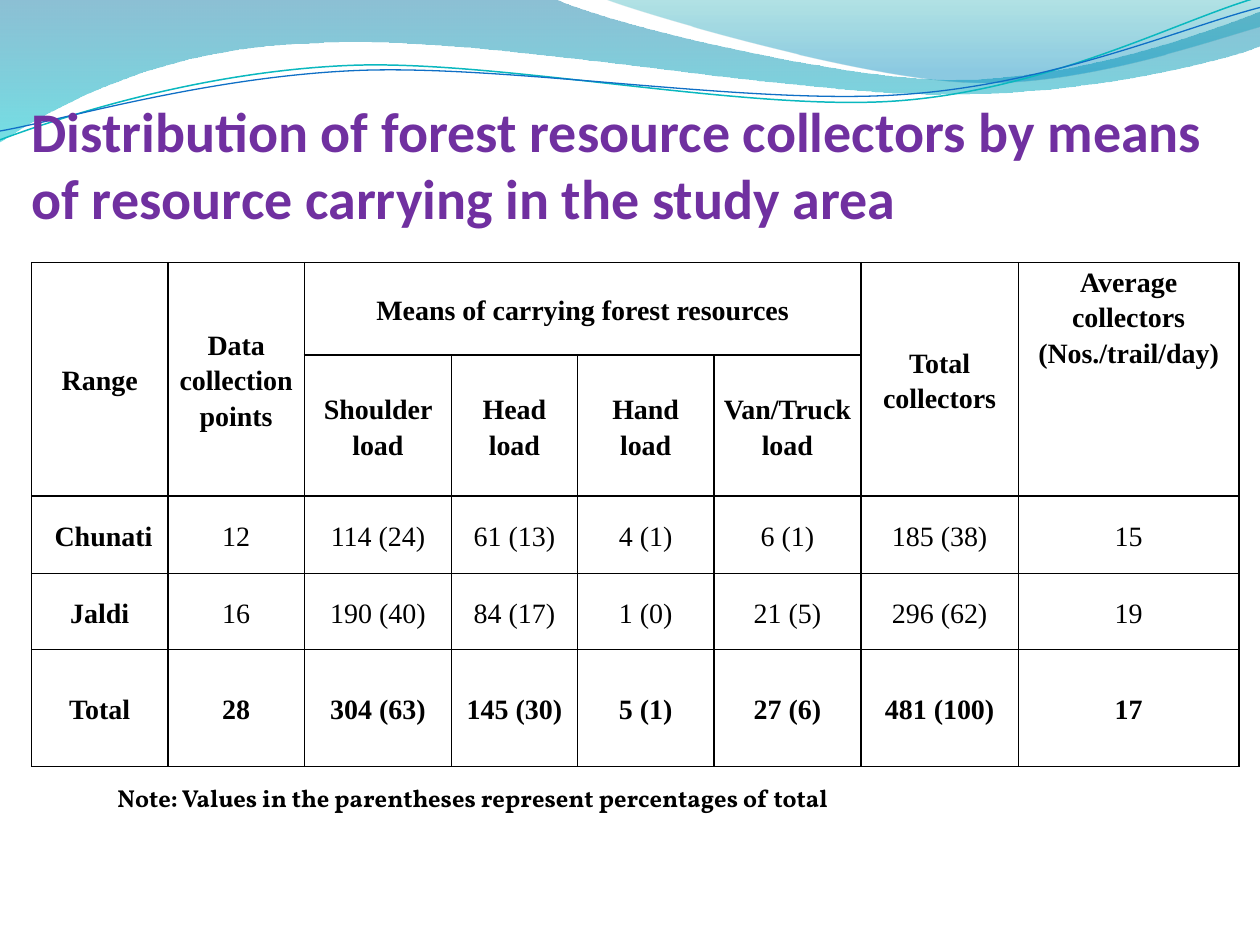
import math
from dataclasses import dataclass
from itertools import product
from typing import Optional

import pptx
import pptx.dml.color
import pptx.enum.text
import pptx.oxml
import pptx.oxml.ns
import pptx.util

Pt = pptx.util.Pt
RGB = pptx.dml.color.RGBColor.from_string
ANCHOR = pptx.enum.text.MSO_ANCHOR
ALIGN = pptx.enum.text.PP_ALIGN
qn = pptx.oxml.ns.qn
NAMESPACE = pptx.oxml.ns.nsdecls("a")


@dataclass(frozen=True)
class Theme:
    title_color: str = "7030A0"
    ink: str = "000000"
    title_font: str = "Calibri"
    table_font: str = "Times New Roman"
    note_font: str = "Vollkorn"
    title_size: float = 32
    table_size: float = 16
    note_size: float = 14
    border: float = 1


THEME = Theme()


@dataclass(frozen=True)
class Stop:
    position: float
    color: str
    opacity: int


@dataclass(frozen=True)
class Wave:
    """Outline in points: pairs are straight segments, sextets are Bezier curves."""
    start: tuple
    segments: tuple
    stops: tuple = ()
    line: Optional[tuple] = None
    center: tuple = (0, 0)
    tilt: float = 0


@dataclass(frozen=True)
class Style:
    font: str
    size: float
    color: str = THEME.ink
    bold: bool = True


@dataclass(frozen=True)
class Entry:
    paragraphs: tuple
    row: int
    column: int
    rows: int = 1
    columns: int = 1
    bold: bool = True
    anchor: ANCHOR = ANCHOR.MIDDLE
    indent: float = 0


WAVES = (
    Wave((0, 0),
         ((316.8, -0.7), (342.7, 12.2, 478.1, 45.4, 545.8, 45.4),
          (614.2, 45.4, 689.8, 18.7, 720, 6.5), (720.7, 25.9),
          (709.2, 31.7, 626.4, 54.7, 537.1, 54), (446.4, 54, 275, 20.2, 185, 24.5),
          (92.9, 25.9, 33.1, 59.8, -0.7, 81.4), (0, 0)),
         stops=(Stop(0, "0074A1", 45), Stop(1, "00C6CF", 55))),
    Wave((344.9, -0.7),
         ((366.5, 7.9, 491, 44.6, 553.7, 46.8),
          (616.3, 49.7, 691.9, 23, 720, 15.1), (720, 0), (344.9, -0.7)),
         stops=(Stop(0, "00A1A9", 30), Stop(0.8, "008BBF", 45))),
    Wave((0, 79.9),
         ((34.6, 67, 113.8, 41, 199.4, 37.4), (284.4, 33.8, 427, 64.1, 513.4, 57.6),
          (599.8, 51.1, 675.4, 10.8, 718.6, -1.4)),
         line=("0AB8BF", 0.85), center=(359.3, 41.4), tilt=-2.7),
    Wave((0, 74.9),
         ((33.8, 69.1, 118.1, 43.9, 203.8, 40.3), (290.2, 36.7, 430.6, 60.5, 516.2, 54),
          (601.9, 48.2, 677.5, 15.1, 720, 4.3)),
         line=("0F6FC6", 0.75), center=(359.6, 42.5), tilt=-2.7),
)

COLUMN_WIDTHS = (78, 78, 84, 72, 78, 84, 90, 126)
ROW_HEIGHTS = (53, 80.4, 44.5, 43.2, 66.9)
HEADINGS = (
    Entry(("Range",), 0, 0, rows=2),
    Entry(("Data collection points",), 0, 1, rows=2),
    Entry(("Means of carrying forest resources",), 0, 2, columns=4),
    Entry(("Total collectors",), 0, 6, rows=2),
    Entry(("Average collectors", "(Nos./trail/day)"), 0, 7, rows=2, anchor=ANCHOR.TOP),
)
MEANS = ("Shoulder load", "Head load", "Hand load", "Van/Truck load")
RANGES = (
    ("Chunati", "12", "114 (24)", "61 (13)", "4 (1)", "6 (1)", "185 (38)", "15"),
    ("Jaldi", "16", "190 (40)", "84 (17)", "1 (0)", "21 (5)", "296 (62)", "19"),
    ("Total", "28", "304 (63)", "145 (30)", "5 (1)", "27 (6)", "481 (100)", "17"),
)


def untilted(wave: Wave, x: float, y: float) -> tuple:
    """Place a point where the wave's own rotation will bring it to (x, y)."""
    angle = math.radians(-wave.tilt)
    dx, dy = x - wave.center[0], y - wave.center[1]
    return (Pt(wave.center[0] + dx * math.cos(angle) - dy * math.sin(angle)),
            Pt(wave.center[1] + dx * math.sin(angle) + dy * math.cos(angle)))


def bend(ribbon, segments: tuple) -> None:
    """Join the three straight steps of every sextet into one Bezier curve."""
    steps = iter(list(ribbon.element.iter(qn("a:lnTo"))))
    for segment in segments:
        first = next(steps)
        if len(segment) == 2:
            continue
        curve = pptx.oxml.parse_xml(f"<a:cubicBezTo {NAMESPACE}/>")
        first.addprevious(curve)
        for step in (first, next(steps), next(steps)):
            curve.append(step[0])
            step.getparent().remove(step)


def draw_wave(slide, wave: Wave) -> None:
    corners = [untilted(wave, *wave.start)]
    for segment in wave.segments:
        corners += [untilted(wave, *pair) for pair in zip(segment[::2], segment[1::2])]
    builder = slide.shapes.build_freeform(*corners[0])
    builder.add_line_segments(corners[1:], close=bool(wave.stops))
    ribbon = builder.convert_to_shape()
    bend(ribbon, wave.segments)
    ribbon.rotation = wave.tilt
    ribbon.shadow.inherit = False
    if wave.line:
        color, width = wave.line
        ribbon.fill.background()
        ribbon.line.color.rgb = RGB(color)
        ribbon.line.width = Pt(width)
        return
    ribbon.line.fill.background()
    ribbon.fill.gradient()
    ribbon.fill.gradient_angle = 270
    for target, stop in zip(ribbon.fill.gradient_stops, wave.stops):
        target.position = stop.position
        target.color.rgb = RGB(stop.color)
    for color, stop in zip(ribbon.element.spPr.iter(qn("a:srgbClr")), wave.stops):
        color.append(pptx.oxml.parse_xml(
            f'<a:alpha {NAMESPACE} val="{stop.opacity * 1000}"/>'))


def add_run(paragraph, wording: str, style: Style) -> None:
    run = paragraph.add_run()
    run.text = wording
    run.font.name = style.font
    run.font.size = Pt(style.size)
    run.font.bold = style.bold
    run.font.color.rgb = RGB(style.color)


def add_text(slide, wording: str, box: tuple, style: Style):
    frame = slide.shapes.add_textbox(*map(Pt, box)).text_frame
    frame.word_wrap = True
    add_run(frame.paragraphs[0], wording, style)
    return frame


def add_borders(cell) -> None:
    properties = cell._tc.get_or_add_tcPr()
    for index, side in enumerate("LRTB"):
        properties.insert(index, pptx.oxml.parse_xml(
            f'<a:ln{side} {NAMESPACE} w="{Pt(THEME.border)}"><a:solidFill>'
            f'<a:srgbClr val="{THEME.ink}"/></a:solidFill></a:ln{side}>'))


def fill_entry(table, entry: Entry) -> None:
    cell = table.cell(entry.row, entry.column)
    if entry.rows * entry.columns > 1:
        cell.merge(table.cell(entry.row + entry.rows - 1,
                              entry.column + entry.columns - 1))
    cell.vertical_anchor = entry.anchor
    style = Style(THEME.table_font, THEME.table_size, bold=entry.bold)
    for index, wording in enumerate(entry.paragraphs):
        frame = cell.text_frame
        paragraph = frame.add_paragraph() if index else frame.paragraphs[0]
        paragraph.alignment = ALIGN.CENTER
        paragraph.line_spacing = 1.15
        if entry.indent:
            paragraph._p.get_or_add_pPr().set("indent", str(Pt(entry.indent)))
        add_run(paragraph, wording, style)


def draw_table(slide, entries: list) -> None:
    table = slide.shapes.add_table(
        len(ROW_HEIGHTS), len(COLUMN_WIDTHS), Pt(18), Pt(150),
        Pt(sum(COLUMN_WIDTHS)), Pt(sum(ROW_HEIGHTS))).table
    table.first_row = table.horz_banding = False
    for column, width in zip(table.columns, COLUMN_WIDTHS):
        column.width = Pt(width)
    for row, height in zip(table.rows, ROW_HEIGHTS):
        row.height = Pt(height)
    for position in product(range(len(ROW_HEIGHTS)), range(len(COLUMN_WIDTHS))):
        cell = table.cell(*position)
        cell.margin_left = cell.margin_right = Pt(5)
        cell.margin_top = cell.margin_bottom = 0
        cell.fill.background()
        add_borders(cell)
    for entry in entries:
        fill_entry(table, entry)


def main() -> None:
    deck = pptx.Presentation()
    deck.slide_width, deck.slide_height = Pt(720), Pt(540)
    slide = deck.slides.add_slide(deck.slide_layouts[6])
    for wave in WAVES:
        draw_wave(slide, wave)
    title = add_text(
        slide, "Distribution of forest resource collectors by means of resource "
        "carrying in the study area", (18, 42, 690, 90),
        Style(THEME.title_font, THEME.title_size, THEME.title_color))
    title.vertical_anchor = ANCHOR.BOTTOM
    title.margin_left = title.margin_right = title.margin_bottom = 0
    means = [Entry((name,), 1, column) for column, name in enumerate(MEANS, 2)]
    figures = [
        Entry((value,), row, column, bold=column == 0 or values[0] == "Total",
              indent=4.3 if value == "Chunati" else 0)
        for row, values in enumerate(RANGES, 2) for column, value in enumerate(values)]
    draw_table(slide, [*HEADINGS, *means, *figures])
    add_text(slide, "Note: Values in the parentheses represent percentages of total",
             (60, 444, 498, 24.5), Style(THEME.note_font, THEME.note_size))
    deck.save("out.pptx")


if __name__ == "__main__":
    main()
